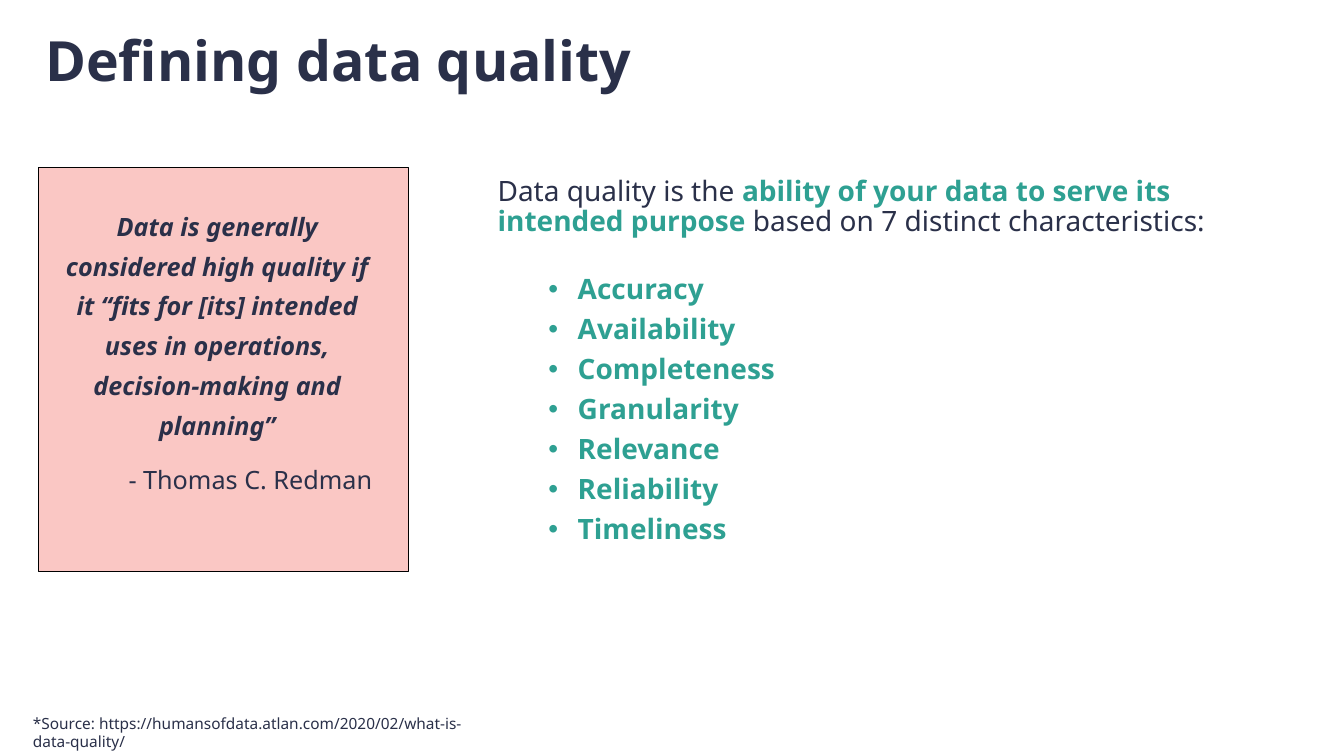
from dataclasses import dataclass

from lxml import etree
from pptx import Presentation
from pptx.dml.color import RGBColor
from pptx.enum import shapes, text
from pptx.oxml import ns
from pptx.util import Cm, Pt

HUES = {"ink": "2A3049", "teal": "2EA092", "pink": "FAC7C4", "edge": "000000"}
FACE = "Noto Sans"
ALIGN = text.PP_ALIGN


@dataclass
class Box:
    """Place of a shape, in centimetres."""
    left: float
    top: float
    width: float
    height: float

    def place(self) -> tuple:
        return Cm(self.left), Cm(self.top), Cm(self.width), Cm(self.height)


@dataclass
class Run:
    words: str
    hue: str = "ink"
    bold: bool = False


@dataclass
class Para:
    runs: list[Run]
    size: float
    italic: bool = False
    align: ALIGN = ALIGN.LEFT
    lines: float = 1.0
    before: float = 0
    after: float = 0
    bullet: bool = False


@dataclass
class Block:
    box: Box
    paras: list[Para]
    anchor: text.MSO_ANCHOR = text.MSO_ANCHOR.TOP
    inset: bool = True


def tint(hue: str) -> RGBColor:
    return RGBColor.from_string(HUES[hue])


def style(font, run: Run) -> None:
    font.bold = run.bold
    font.color.rgb = tint(run.hue)


def dot(par) -> None:
    """Give the paragraph a hanging round bullet."""
    props = par._p.get_or_add_pPr()
    props.set("marL", str(Cm(0.74)))
    props.set("indent", str(-Cm(0.74)))
    etree.SubElement(props, ns.qn("a:buFont")).set("typeface", "Arial")
    etree.SubElement(props, ns.qn("a:buChar")).set("char", "•")


def write(par, para: Para) -> None:
    par.alignment = para.align
    par.line_spacing = para.lines
    par.space_before = Pt(para.before)
    par.space_after = Pt(para.after)
    if para.bullet:
        dot(par)
    par.font.name = FACE
    par.font.size = Pt(para.size)
    par.font.italic = para.italic
    for run in para.runs:
        part = par.add_run()
        part.text = run.words
        if len(para.runs) > 1:
            style(part.font, run)
    if len(para.runs) == 1:
        style(par.font, para.runs[0])


def add_text(slide, block: Block) -> None:
    frame = slide.shapes.add_textbox(*block.box.place()).text_frame
    frame.word_wrap = True
    frame.vertical_anchor = block.anchor
    if not block.inset:
        frame.margin_left = frame.margin_right = 0
        frame.margin_top = frame.margin_bottom = 0
    for i, para in enumerate(block.paras):
        write(frame.add_paragraph() if i else frame.paragraphs[0], para)


def add_card(slide, box: Box) -> None:
    card = slide.shapes.add_shape(shapes.MSO_SHAPE.RECTANGLE, *box.place())
    card.shadow.inherit = False
    card.fill.solid()
    card.fill.fore_color.rgb = tint("pink")
    card.line.color.rgb = tint("edge")
    card.line.width = Pt(1)


TRAITS = ["Accuracy", "Availability", "Completeness", "Granularity",
          "Relevance", "Reliability", "Timeliness"]

QUOTE = ("Data is generally considered high quality if it “fits for [its] "
         "intended uses in operations, decision-making and planning”")

SOURCE = "*Source: https://humansofdata.atlan.com/2020/02/what-is-data-quality/"

BLOCKS = [
    Block(Box(1.32, 4.95, 8.31, 8.92), [
        Para([Run(QUOTE, bold=True)], 18, italic=True, align=ALIGN.CENTER,
             lines=1.32, after=6),
        Para([Run("- Thomas C. Redman")], 18, align=ALIGN.RIGHT,
             lines=1.32, before=4),
    ]),
    Block(Box(0.89, 0.89, 29.97, 1.19),
          [Para([Run("Defining data quality", bold=True)], 39.6)],
          anchor=text.MSO_ANCHOR.MIDDLE),
    Block(Box(0.58, 17.86, 12.19, 0.74), [Para([Run(SOURCE)], 11)]),
    Block(Box(12.29, 4.34, 18.39, 1.96), [Para([
        Run("Data quality is the "),
        Run("ability of your data to serve its intended purpose ", "teal", True),
        Run("based on 7 distinct characteristics:"),
    ], 20, lines=0.9)]),
    Block(Box(13.82, 6.93, 6.5, 7.39), [
        Para([Run(trait, "teal", True)], 20, lines=0.9,
             before=7 if i else 0, bullet=True)
        for i, trait in enumerate(TRAITS)
    ], inset=False),
]


def main() -> None:
    deck = Presentation()
    deck.slide_width, deck.slide_height = Cm(33.87), Cm(19.05)
    slide = deck.slides.add_slide(deck.slide_layouts[6])
    add_card(slide, Box(0.97, 4.22, 9.32, 10.19))
    for block in BLOCKS:
        add_text(slide, block)
    deck.save("out.pptx")


if __name__ == "__main__":
    main()
